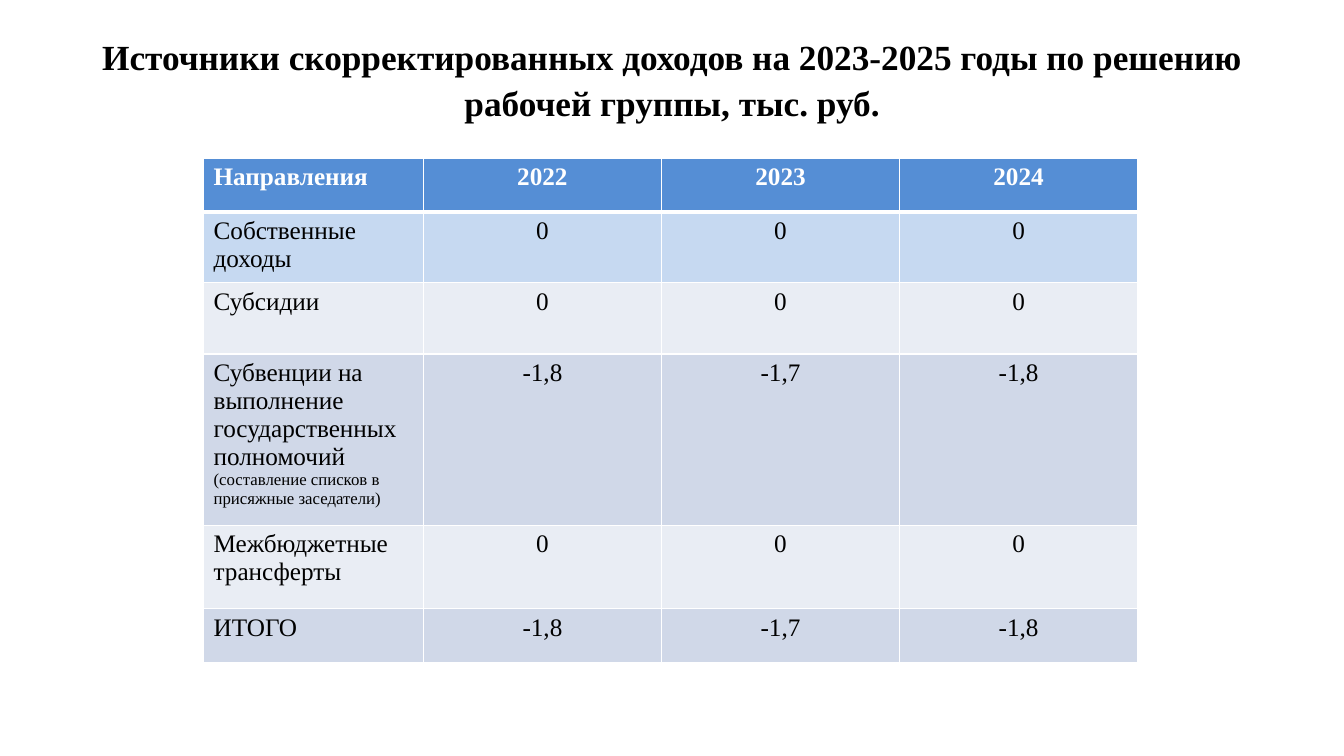
from dataclasses import dataclass

from lxml.etree import SubElement
from pptx import Presentation
from pptx.dml.color import RGBColor as Rgb
from pptx.enum.text import MSO_ANCHOR as Anchor, PP_ALIGN as Align
from pptx.oxml.ns import qn
from pptx.util import Cm, Pt


@dataclass(frozen=True)
class Theme:
    font: str = "Times New Roman"
    ink: str = "000000"
    white: str = "FFFFFF"
    head: str = "558ED5"
    first: str = "C6D9F1"
    light: str = "E9EDF4"
    dark: str = "D0D8E8"
    title: float = 25.2
    body: float = 18
    note: float = 12
    rule: float = 1
    thick: float = 3


class Deck:
    def __init__(self, theme):
        self.theme = theme
        self.file = Presentation()
        self.file.slide_width = Cm(33.87)
        self.file.slide_height = Cm(19.05)
        self.slide = self.file.slides.add_slide(self.file.slide_layouts[6])

    def style(self, para, size, color, bold=False, align=Align.CENTER):
        para.alignment = align
        for run in para.runs:
            font = run.font
            font.name, font.size, font.bold = self.theme.font, Pt(size), bold
            font.color.rgb = Rgb.from_string(color)

    def title(self, text, left, top, width, height):
        box = self.slide.shapes.add_textbox(Cm(left), Cm(top), Cm(width), Cm(height))
        frame = box.text_frame
        frame.word_wrap = True
        frame.vertical_anchor = Anchor.MIDDLE
        frame.text = text
        para = frame.paragraphs[0]
        para.line_spacing = 1.07
        self.style(para, self.theme.title, self.theme.ink, True)

    def edge(self, cell, side, width):
        line = SubElement(cell._tc.get_or_add_tcPr(), qn("a:" + side), w=str(Pt(width)))
        fill = SubElement(line, qn("a:solidFill"))
        SubElement(fill, qn("a:srgbClr"), val=self.theme.white)

    def cell(self, cell, text, row, col, fill):
        """Fill one cell; text lines after the first are set as small notes."""
        theme = self.theme
        head = row == 0
        cell.text_frame.text = text
        for num, para in enumerate(cell.text_frame.paragraphs):
            self.style(para, theme.note if num else theme.body,
                       theme.white if head else theme.ink, head,
                       Align.CENTER if col else Align.LEFT)
        # Borders must precede the fill in the cell properties.
        for side in ("lnL", "lnR", "lnT", "lnB"):
            heavy = (side == "lnB" and row == 0) or (side == "lnT" and row == 1)
            self.edge(cell, side, theme.thick if heavy else theme.rule)
        cell.fill.solid()
        cell.fill.fore_color.rgb = Rgb.from_string(fill)

    def table(self, rows, fills, left, top, widths, heights):
        shape = self.slide.shapes.add_table(
            len(rows), len(widths), Cm(left), Cm(top),
            Cm(sum(widths)), Cm(sum(heights)))
        grid = shape.table
        for col, width in zip(grid.columns, widths):
            col.width = Cm(width)
        for row, height in zip(grid.rows, heights):
            row.height = Cm(height)
        for i, (row, fill) in enumerate(zip(rows, fills)):
            for j, text in enumerate(row):
                self.cell(grid.cell(i, j), text, i, j, fill)


def main():
    theme = Theme()
    deck = Deck(theme)
    deck.title("Источники скорректированных доходов на 2023-2025 годы "
               "по решению рабочей группы, тыс. руб.", 1.7, 0.76, 30.48, 2.41)
    zero = ("0", "0", "0")
    cut = ("-1,8", "-1,7", "-1,8")
    rows = [
        ("Направления", "2022", "2023", "2024"),
        ("Собственные доходы", *zero),
        ("Субсидии", *zero),
        ("Субвенции на выполнение государственных полномочий\n"
         "(составление списков в присяжные заседатели)", *cut),
        ("Межбюджетные трансферты", *zero),
        ("ИТОГО", *cut),
    ]
    fills = [theme.head, theme.first] + [theme.light, theme.dark] * 2
    deck.table(rows, fills, 5.13, 3.99, [5.54] + [6] * 3,
               [1.35, 1.64, 1.8, 4.29, 2.1, 1.35])
    deck.file.save("out.pptx")


if __name__ == "__main__":
    main()
